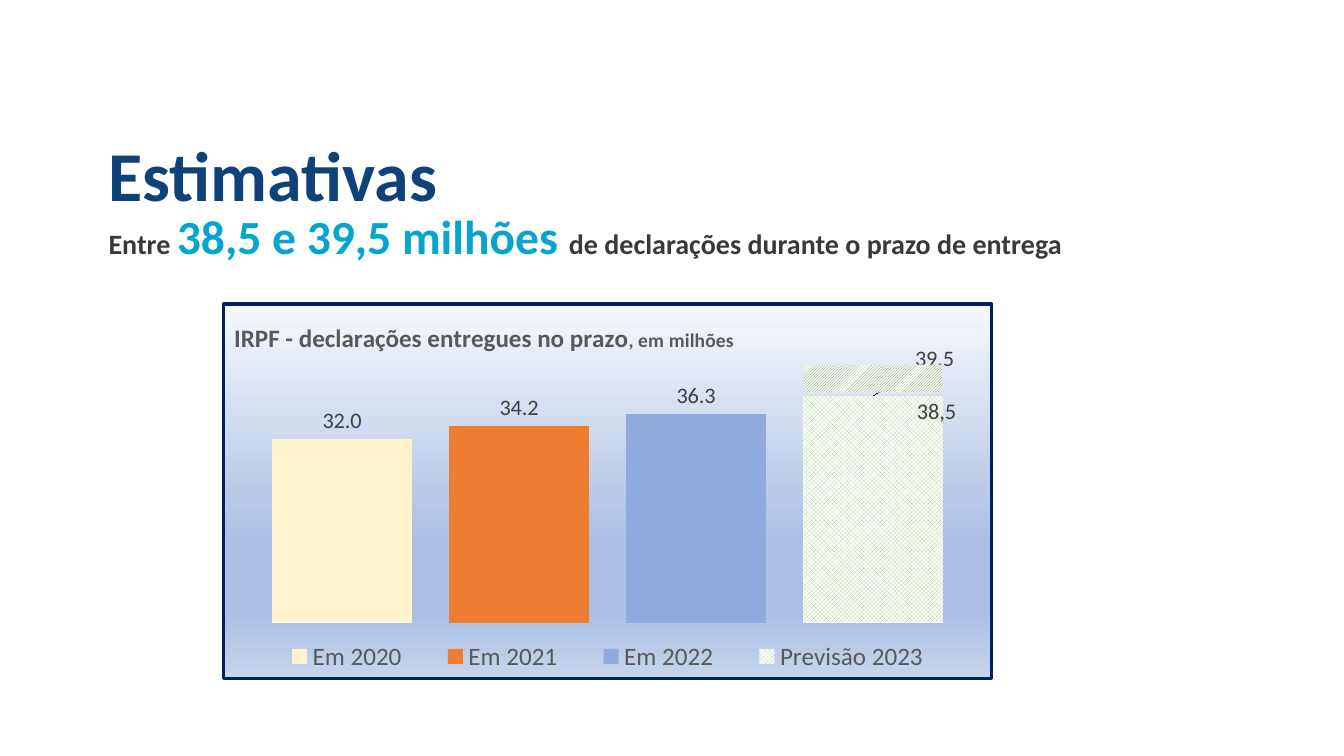
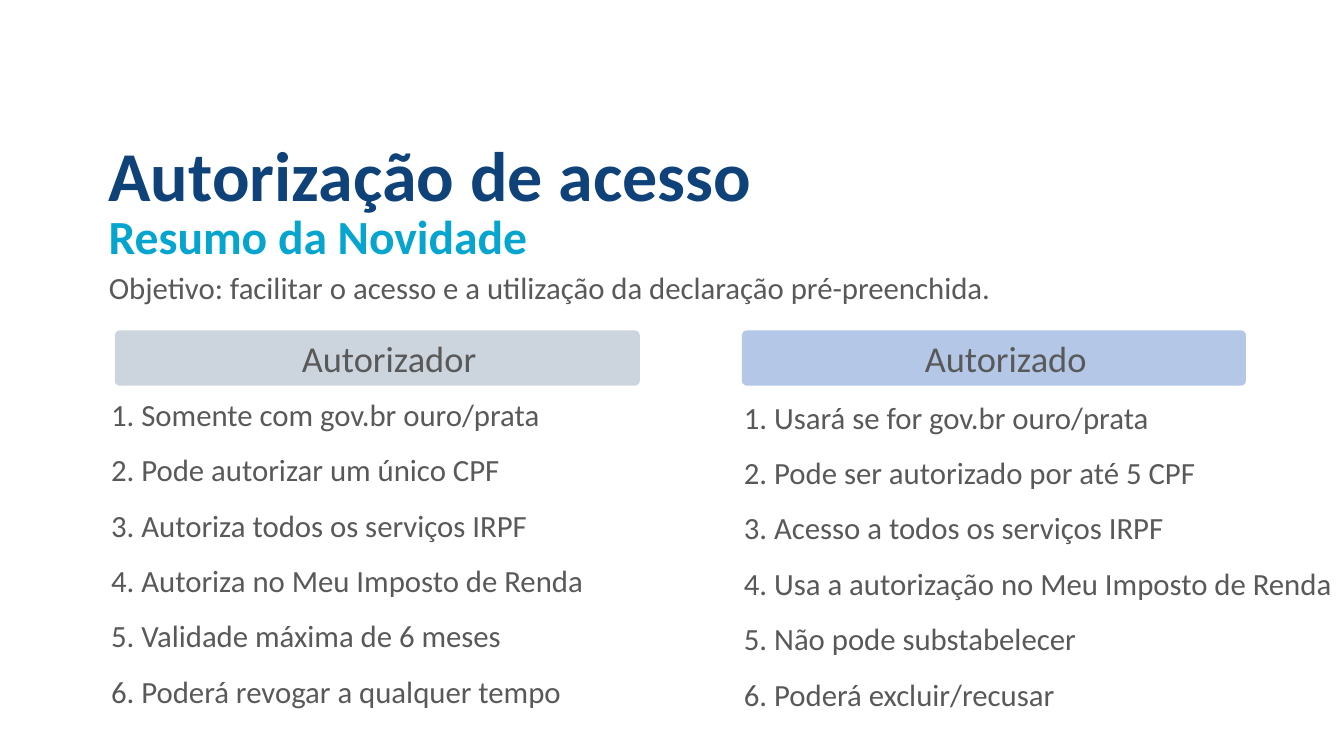
from lxml import etree
from pptx import Presentation
from pptx import util as u
from pptx.chart import data as chart_data
from pptx.dml.color import RGBColor
from pptx.enum import chart as charts, dml, shapes, text
from pptx.oxml import ns, parse_xml

Pt = u.Pt
ALIGN = text.PP_ALIGN
ANCHOR = text.MSO_ANCHOR
LEFT = 70.5


class Deck:
    """Presentation style, current slide and one method per kind of element."""

    font = "Calibri"
    colors = {
        "navy": "0F4279", "cyan": "06A5D0", "dark": "3B3838", "body": "595959",
        "label": "404040", "white": "FFFFFF", "cream": "FFF2CC", "orange": "ED7D31",
        "blue": "8FAADC", "mint": "A9D18E", "green": "548235", "steel": "CCD4DE",
        "sky": "B4C7E7", "frame": "002060", "haze": "F6F8FC", "mist": "ABC0E4",
        "dawn": "C7D5ED",
    }

    def __init__(self):
        self.prs = Presentation()
        self.prs.slide_width, self.prs.slide_height = Pt(960), Pt(540)
        self.slide = None

    def rgb(self, name):
        return RGBColor.from_string(self.colors[name])

    def style(self, font, size, color, bold=False):
        font.name, font.size, font.bold = self.font, Pt(size), bold
        font.color.rgb = self.rgb(color)

    def hatch(self, fill, pattern, color):
        fill.patterned()
        fill.pattern = pattern
        fill.fore_color.rgb = self.rgb(color)
        fill.back_color.rgb = self.rgb("white")

    def runs(self, paragraph, parts):
        for words, size, color, bold in parts:
            run = paragraph.add_run()
            run.text = words
            self.style(run.font, size, color, bold)

    def new_slide(self, heading):
        self.slide = self.prs.slides.add_slide(self.prs.slide_layouts[6])
        self.textbox((LEFT, 90.5, 819.5, 68), [(heading, 50, "navy", True)])

    def textbox(self, box, parts, align=ALIGN.LEFT, anchor=ANCHOR.TOP):
        frame = self.slide.shapes.add_textbox(*map(Pt, box)).text_frame
        frame.word_wrap = True
        frame.vertical_anchor = anchor
        frame.paragraphs[0].alignment = align
        self.runs(frame.paragraphs[0], parts)

    def shape(self, kind, box, color=None, corner=None):
        item = self.slide.shapes.add_shape(kind, *map(Pt, box))
        item.shadow.inherit = False
        item.line.fill.background()
        if corner is not None:
            item.adjustments[0] = corner
        if color:
            item.fill.solid()
            item.fill.fore_color.rgb = self.rgb(color)
        else:
            item.fill.background()
        return item

    def lines(self, box, sentences):
        panel = self.shape(shapes.MSO_SHAPE.ROUNDED_RECTANGLE, box, corner=0.026)
        frame = panel.text_frame
        frame.word_wrap, frame.margin_right = True, 0
        frame.vertical_anchor = ANCHOR.MIDDLE
        for index, sentence in enumerate(sentences):
            paragraph = frame.add_paragraph() if index else frame.paragraphs[0]
            paragraph.alignment, paragraph.line_spacing = ALIGN.LEFT, 1.5
            self.runs(paragraph, [(sentence, 22, "body", False)])

    def column(self, heading, color, band, panel, sentences):
        self.lines(panel, [f"{n}. {s}" for n, s in enumerate(sentences, 1)])
        header = self.shape(shapes.MSO_SHAPE.ROUNDED_RECTANGLE, band, color, 0.089)
        frame = header.text_frame
        frame.margin_left = Pt(24)
        frame.vertical_anchor = ANCHOR.MIDDLE
        frame.paragraphs[0].alignment = ALIGN.CENTER
        self.runs(frame.paragraphs[0], [(heading, 26, "body", False)])

    def place(self, parent, index, inner=False, **values):
        for old in parent.findall(ns.qn("c:layout")):
            parent.remove(old)
        layout = etree.Element(ns.qn("c:layout"))
        manual = etree.SubElement(layout, ns.qn("c:manualLayout"))
        settings = {"layoutTarget": "inner"} if inner else {}
        if parent.tag != ns.qn("c:dLbl"):
            settings.update(xMode="edge", yMode="edge")
        settings.update(values)
        for name, value in settings.items():
            etree.SubElement(manual, ns.qn("c:" + name)).set("val", str(value))
        parent.insert(index, layout)

    def backdrop(self, chart, stops, border):
        marks = "".join(
            f'<a:gs pos="{pos * 1000}"><a:srgbClr val="{self.colors[name]}"/></a:gs>'
            for pos, name in stops)
        chart.element.find(ns.qn("c:chart")).addnext(parse_xml(
            f'<c:spPr {ns.nsdecls("c", "a")}><a:gradFill><a:gsLst>{marks}</a:gsLst>'
            '<a:lin ang="5400000" scaled="0"/></a:gradFill>'
            f'<a:ln w="{Pt(2.25)}"><a:solidFill><a:srgbClr val="{self.colors[border]}"/>'
            '</a:solidFill></a:ln></c:spPr>'))

    def columns_chart(self, box, title, data):
        figures = chart_data.CategoryChartData(number_format="0.0")
        figures.categories = ["1"]
        for name, value, _ in data:
            figures.add_series(name, [value])
        chart = self.slide.shapes.add_chart(
            charts.XL_CHART_TYPE.COLUMN_CLUSTERED, *map(Pt, box), figures).chart
        self.style(chart.font, 10, "label")
        self.backdrop(chart, [(0, "haze"), (63, "mist"), (83, "mist"), (100, "dawn")],
                      "frame")
        chart.has_title = True
        self.runs(chart.chart_title.text_frame.paragraphs[0], title)
        self.place(chart.chart_title._element, 1, x=0.01, y=0.04)
        chart.value_axis.minimum_scale, chart.value_axis.maximum_scale = 0, 45
        chart.value_axis.has_major_gridlines = False
        chart.value_axis.visible = chart.category_axis.visible = False
        chart.has_legend = True
        chart.legend.position = charts.XL_LEGEND_POSITION.BOTTOM
        chart.legend.include_in_layout = False
        self.style(chart.legend.font, 18, "body")
        self.place(chart.legend._element, 1, x=0.04, y=0.89, w=0.92, h=0.1)
        plot = chart.plots[0]
        plot.gap_width, plot.overlap, plot.vary_by_categories = 48, -27, False
        self.place(chart.element.find(".//" + ns.qn("c:plotArea")), 0, inner=True,
                   x=0.02, y=0.16, w=0.96, h=0.69)
        for series, (_, _, color) in zip(plot.series, data):
            series.format.fill.solid()
            series.format.fill.fore_color.rgb = self.rgb(color)
            labels = series.data_labels
            labels.show_value = True
            labels.number_format, labels.number_format_is_linked = "0.0", False
            labels.position = charts.XL_LABEL_POSITION.OUTSIDE_END
            self.style(labels.font, 16, "label")
        return chart


def estimates(deck):
    deck.new_slide("Estimativas")
    chart = deck.columns_chart(
        (158.5, 216, 551, 270),
        [("IRPF - declarações entregues no prazo", 18, "body", True),
         (", em milhões", 14, "body", True)],
        [("Em 2020", 32, "cream"), ("Em 2021", 34.2, "orange"),
         ("Em 2022", 36.3, "blue"), ("Previsão 2023", 39.5, "mint")])
    forecast = chart.plots[0].series[3]
    deck.hatch(forecast.format.fill, dml.MSO_PATTERN.TRELLIS, "mint")
    upper = forecast.points[0].data_label
    deck.style(upper.font, 16, "label")
    upper.position = charts.XL_LABEL_POSITION.OUTSIDE_END
    deck.place(forecast.data_labels._element.find(ns.qn("c:dLbl")), 1, x=0.08, y=-0.05)
    margin = deck.shape(shapes.MSO_SHAPE.RECTANGLE, (574.5, 260.5, 98.5, 20))
    deck.hatch(margin.fill, dml.MSO_PATTERN.DARK_UPWARD_DIAGONAL, "green")
    deck.textbox((646, 281, 46, 24), [("38,5", 16, "label", False)],
                 ALIGN.CENTER, ANCHOR.MIDDLE)
    deck.textbox((LEFT, 144.5, 881, 48), [
        ("Entre ", 20, "dark", True),
        ("38,5 e 39,5 milhões ", 34, "cyan", True),
        ("de declarações durante o prazo de entrega", 20, "dark", True)])


def access(deck):
    deck.new_slide("Autorização de acesso")
    deck.textbox((LEFT, 144.5, 500, 48), [("Resumo da Novidade", 34, "cyan", True)])
    deck.lines((LEFT, 183.5, 755, 29.5), [
        "Objetivo: facilitar o acesso e a utilização da declaração pré-preenchida."])
    deck.column("Autorizador", "steel", (82, 236, 375, 39.5), (LEFT, 268, 449, 240), [
        "Somente com gov.br ouro/prata",
        "Pode autorizar um único CPF",
        "Autoriza todos os serviços IRPF",
        "Autoriza no Meu Imposto de Renda",
        "Validade máxima de 6 meses",
        "Poderá revogar a qualquer tempo"])
    deck.column("Autorizado", "sky", (530, 236, 360, 39.5), (522.5, 270, 437.5, 240), [
        "Usará se for gov.br ouro/prata",
        "Pode ser autorizado por até 5 CPF",
        "Acesso a todos os serviços IRPF",
        "Usa a autorização no Meu Imposto de Renda",
        "Não pode substabelecer",
        "Poderá excluir/recusar"])


def main():
    deck = Deck()
    estimates(deck)
    access(deck)
    deck.prs.save("out.pptx")


if __name__ == "__main__":
    main()
